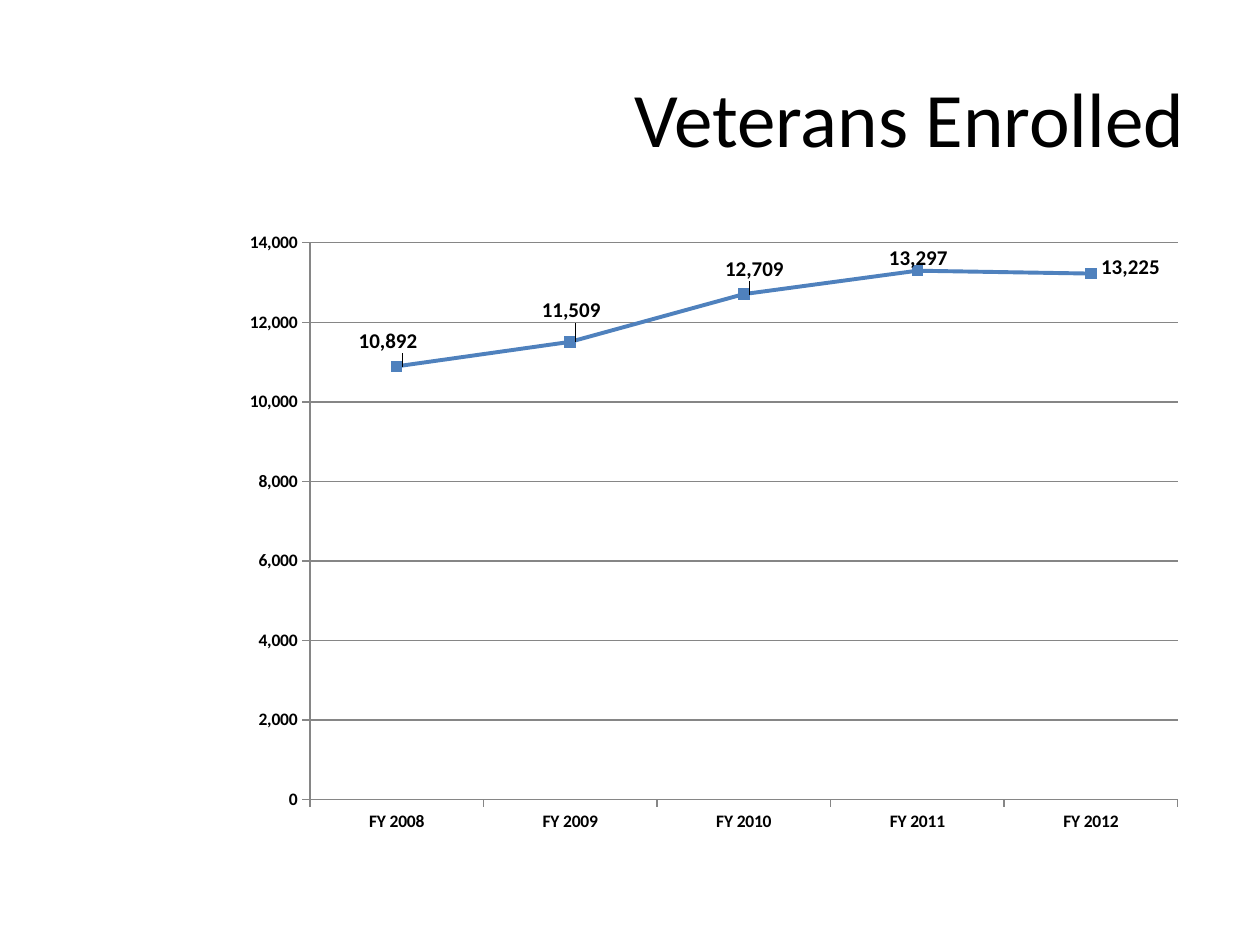
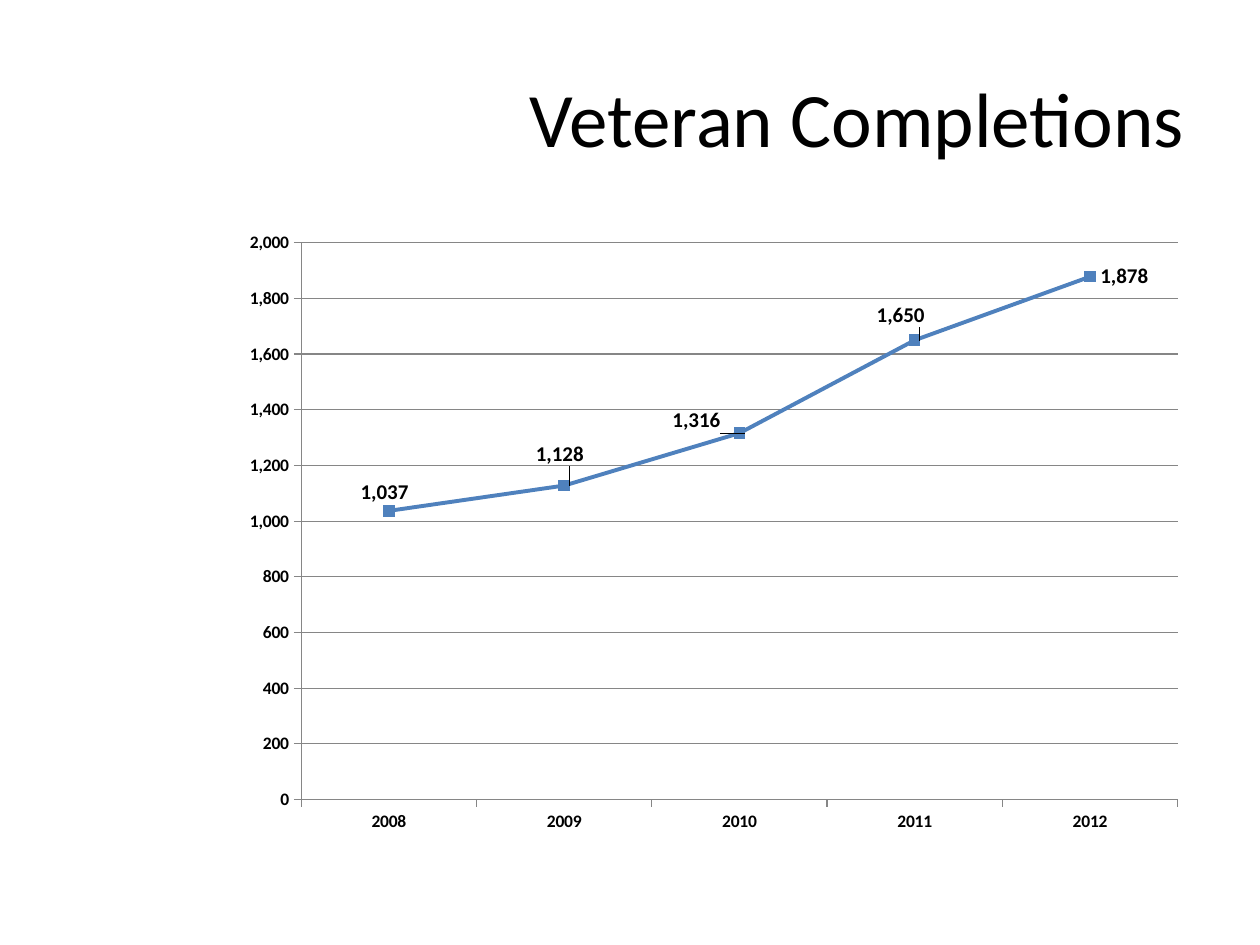
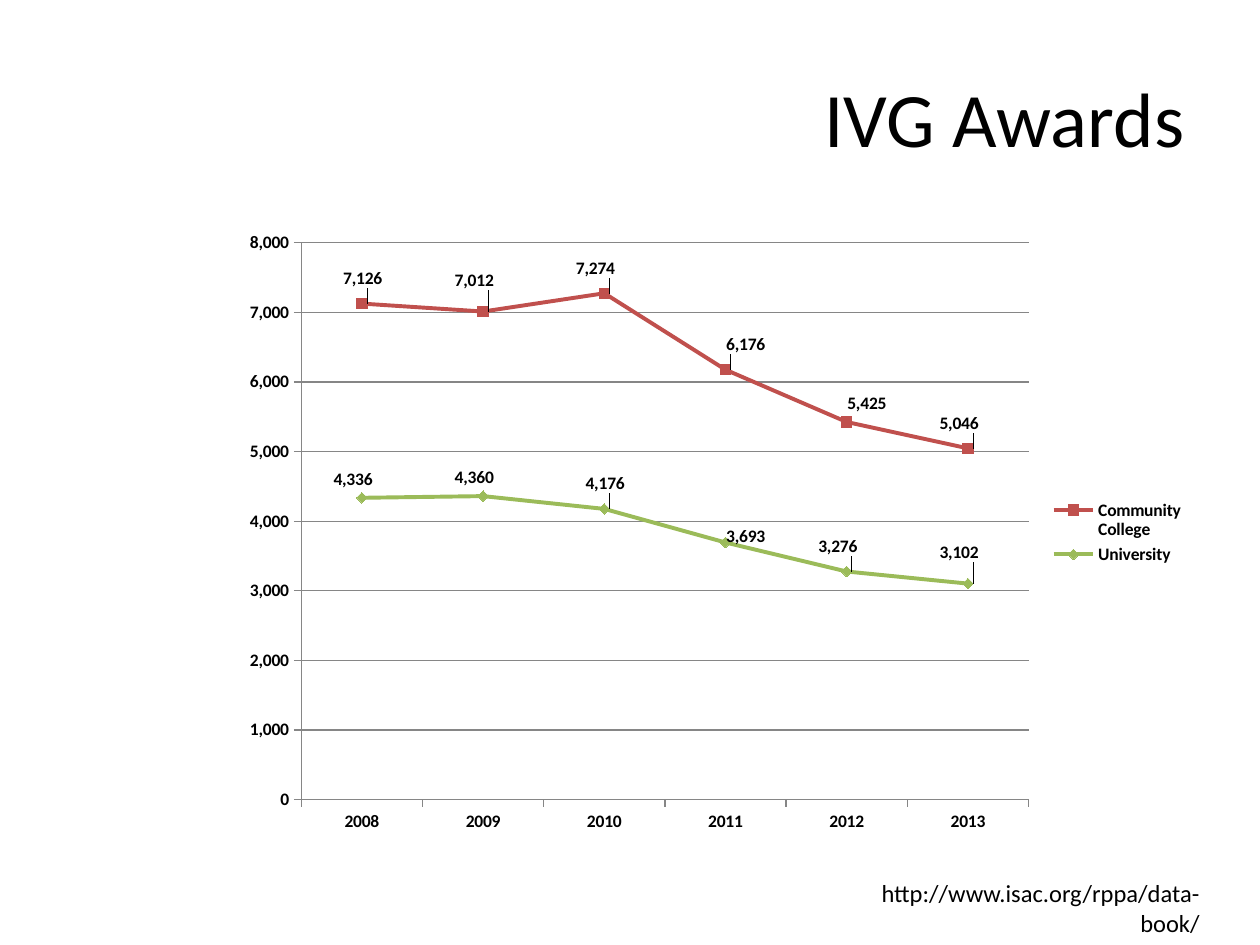
from dataclasses import dataclass

from lxml import etree
from pptx import Presentation
from pptx.chart.data import CategoryChartData
from pptx.dml.color import RGBColor
from pptx.enum import chart as ch, text
from pptx.oxml import ns
from pptx.util import Inches, Pt

FONT = "Calibri"
BLACK, GRAY = "000000", "868686"
BLUE, RED, GREEN = "4F81BD", "C0504D", "9BBB59"
SQUARE, DIAMOND = ch.XL_MARKER_STYLE.SQUARE, ch.XL_MARKER_STYLE.DIAMOND
TITLE_BOX = (1.83, 0.3, 7.67, 1.25)
TREND_BOX = (1.83, 1.75, 7.67, 4.95)
SOURCE_BOX = (6.43, 6.92, 3.19, 0.34)


@dataclass
class Trend:
    name: str
    counts: list
    color: str
    marker: object
    label_shifts: list


def rgb(hex_color):
    return RGBColor.from_string(hex_color)


def style_font(font, size, bold=False):
    font.name = FONT
    font.size = Pt(size)
    font.bold = bold
    font.color.rgb = rgb(BLACK)


def style_line(line, color, width):
    line.color.rgb = rgb(color)
    line.width = Pt(width)


def add_right_text(slide, box, wording, size, anchor):
    frame = slide.shapes.add_textbox(*map(Inches, box)).text_frame
    frame.word_wrap = True
    frame.vertical_anchor = anchor
    paragraph = frame.paragraphs[0]
    paragraph.text = wording
    paragraph.alignment = text.PP_ALIGN.RIGHT
    style_font(paragraph.font, size)


def shift_label(series, index, shift):
    found = series._element.xpath(f"c:dLbls/c:dLbl[c:idx/@val='{index}']")
    layout = etree.Element(ns.qn("c:layout"))
    manual = etree.SubElement(layout, ns.qn("c:manualLayout"))
    for axis, fraction in zip("xy", shift):
        etree.SubElement(manual, ns.qn(f"c:{axis}"), val=str(fraction))
    found[0].insert(1, layout)


def style_trend(series, trend, label_size):
    series.smooth = False
    style_line(series.format.line, trend.color, 2.25)
    series.marker.style = trend.marker
    series.marker.size = 6
    series.marker.format.fill.solid()
    series.marker.format.fill.fore_color.rgb = rgb(trend.color)
    style_line(series.marker.format.line, trend.color, 0.75)
    labels = series.data_labels
    labels.show_value = True
    labels.number_format = "#,##0"
    labels.number_format_is_linked = False
    style_font(labels.font, label_size, True)
    for index, shift in enumerate(trend.label_shifts):
        label = series.points[index].data_label
        label.position = ch.XL_LABEL_POSITION.RIGHT
        style_font(label.font, label_size, True)
        shift_label(series, index, shift)


def add_trend_chart(slide, box, years, trends, top, step, label_size):
    chart_data = CategoryChartData(number_format="#,##0")
    chart_data.categories = years
    for trend in trends:
        chart_data.add_series(trend.name, trend.counts)
    chart = slide.shapes.add_chart(
        ch.XL_CHART_TYPE.LINE_MARKERS, *map(Inches, box), chart_data
    ).chart
    chart.has_title = False
    style_font(chart.font, 10)
    chart.plots[0].vary_by_categories = False

    for axis in (chart.category_axis, chart.value_axis):
        axis.major_tick_mark = ch.XL_TICK_MARK.OUTSIDE
        axis.minor_tick_mark = ch.XL_TICK_MARK.NONE
        style_line(axis.format.line, GRAY, 0.75)
        style_font(axis.tick_labels.font, 10, True)
    counts = chart.value_axis
    counts.minimum_scale, counts.maximum_scale, counts.major_unit = 0, top, step
    counts.tick_labels.number_format = "#,##0"
    counts.tick_labels.number_format_is_linked = False
    counts.has_major_gridlines = True
    style_line(counts.major_gridlines.format.line, GRAY, 0.75)

    chart.has_legend = len(trends) > 1
    if chart.has_legend:
        chart.legend.position = ch.XL_LEGEND_POSITION.RIGHT
        chart.legend.include_in_layout = False
        style_font(chart.legend.font, 10, True)
    for series, trend in zip(chart.plots[0].series, trends):
        style_trend(series, trend, label_size)


def add_trend_slide(deck, title, years, trends, top, step, label_size=12, source=None):
    slide = deck.slides.add_slide(deck.slide_layouts[6])
    add_right_text(slide, TITLE_BOX, title, 44, text.MSO_ANCHOR.MIDDLE)
    if source:
        add_right_text(slide, SOURCE_BOX, source, 14, text.MSO_ANCHOR.TOP)
    add_trend_chart(slide, TREND_BOX, years, trends, top, step, label_size)


def main():
    deck = Presentation()
    deck.slide_width, deck.slide_height = Inches(10), Inches(7.5)

    enrolled = Trend(
        "Series 1", [10892, 11509, 12709, 13297, 13225], BLUE, SQUARE,
        [(-0.05, -0.04), (-0.04, -0.05), (-0.03, -0.04), (-0.04, -0.02), (0, -0.01)],
    )
    completions = Trend(
        "Series 1", [1037, 1128, 1316, 1650, 1878], BLUE, SQUARE,
        [(-0.04, -0.03), (-0.04, -0.05), (-0.08, -0.02), (-0.05, -0.04), (0, 0)],
    )
    college = Trend(
        "Community\nCollege", [7126, 7012, 7274, 6176, 5425, 5046], RED, SQUARE,
        [(-0.03, -0.04), (-0.04, -0.05), (-0.04, -0.04),
         (-0.01, -0.04), (-0.01, -0.03), (-0.04, -0.04)],
    )
    university = Trend(
        "University", [4336, 4360, 4176, 3693, 3276, 3102], GREEN, DIAMOND,
        [(-0.04, -0.03), (-0.04, -0.03), (-0.03, -0.04),
         (-0.01, -0.01), (-0.04, -0.04), (-0.04, -0.05)],
    )
    years = [str(year) for year in range(2008, 2014)]
    fiscal_years = [f"FY {year}" for year in years[:5]]

    add_trend_slide(deck, "Veterans Enrolled", fiscal_years, [enrolled], 14000, 2000)
    add_trend_slide(deck, "Veteran Completions", years[:5], [completions], 2000, 200)
    add_trend_slide(
        deck, "IVG Awards", years, [college, university], 8000, 1000,
        label_size=10, source="http://www.isac.org/rppa/data-book/",
    )
    deck.save("out.pptx")


if __name__ == "__main__":
    main()
